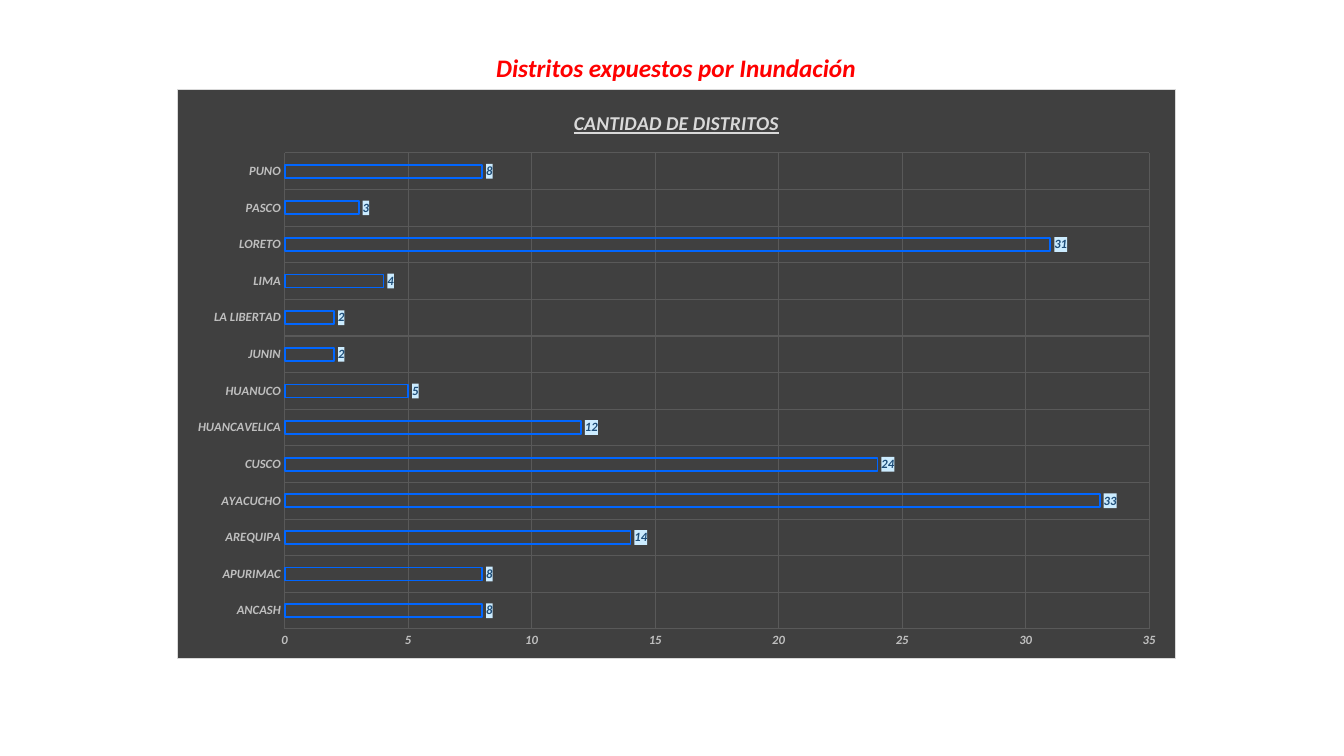
from lxml import etree
from pptx import Presentation
from pptx.chart.data import CategoryChartData
from pptx.dml.color import RGBColor
from pptx.enum.chart import XL_CHART_TYPE as ChartType, XL_LABEL_POSITION as LabelPosition
from pptx.enum.chart import XL_TICK_MARK as TickMark
from pptx.enum.text import MSO_ANCHOR as Anchor, PP_ALIGN as Align
from pptx.oxml import parse_xml
from pptx.oxml.ns import nsdecls, qn
from pptx.util import Inches, Pt

RED = RGBColor(0xFF, 0x00, 0x00)
BLUE = RGBColor(0x00, 0x66, 0xFF)
NAVY = RGBColor(0x1F, 0x4E, 0x79)
PALE_BLUE = RGBColor(0xCC, 0xEC, 0xFF)
CHARCOAL = RGBColor(0x40, 0x40, 0x40)
GRID_GRAY = RGBColor(0x59, 0x59, 0x59)
AXIS_GRAY = RGBColor(0xBF, 0xBF, 0xBF)
LIGHT_GRAY = RGBColor(0xD9, 0xD9, 0xD9)

DISTRICTS = {
    "ANCASH": 8, "APURIMAC": 8, "AREQUIPA": 14, "AYACUCHO": 33, "CUSCO": 24,
    "HUANCAVELICA": 12, "HUANUCO": 5, "JUNIN": 2, "LA LIBERTAD": 2, "LIMA": 4,
    "LORETO": 31, "PASCO": 3, "PUNO": 8,
}


def style_font(font, size, color, underline=None):
    font.name = "Calibri"
    font.size = Pt(size)
    font.bold = True
    font.italic = True
    font.underline = underline
    font.color.rgb = color


def box_format(fill, border=""):
    return parse_xml(
        f'<c:spPr {nsdecls("c", "a")}><a:solidFill><a:srgbClr val="{fill}"/></a:solidFill>'
        f'{border}</c:spPr>'
    )


presentation = Presentation()
presentation.slide_width = Inches(13.33)
presentation.slide_height = Inches(7.5)
slide = presentation.slides.add_slide(presentation.slide_layouts[6])

heading = slide.shapes.add_textbox(Inches(4.8), Inches(0.47), Inches(3.81), Inches(0.4))
heading.text_frame.word_wrap = False
heading.text_frame.vertical_anchor = Anchor.TOP
paragraph = heading.text_frame.paragraphs[0]
paragraph.alignment = Align.CENTER
run = paragraph.add_run()
run.text = "Distritos expuestos por Inundación"
style_font(run.font, 18, RED)

chart_data = CategoryChartData(number_format="#,##0")
chart_data.categories = list(DISTRICTS)
chart_data.add_series("Series 1", list(DISTRICTS.values()))
chart = slide.shapes.add_chart(
    ChartType.BAR_CLUSTERED, Inches(1.76), Inches(0.88), Inches(9.9), Inches(5.66), chart_data
).chart
chart.has_legend = False
chart.font.name = "Calibri"
chart.font.size = Pt(10)

chart.has_title = True
chart.chart_title.include_in_layout = False
title_paragraph = chart.chart_title.text_frame.paragraphs[0]
title_run = title_paragraph.add_run()
title_run.text = "CANTIDAD DE DISTRITOS"
style_font(title_run.font, 14, LIGHT_GRAY, underline=True)

for axis in (chart.category_axis, chart.value_axis):
    axis.major_tick_mark = TickMark.NONE
    axis.minor_tick_mark = TickMark.NONE
    axis.format.line.fill.background()
    axis.has_major_gridlines = True
    axis.major_gridlines.format.line.color.rgb = GRID_GRAY
    axis.major_gridlines.format.line.width = Pt(0.75)
    style_font(axis.tick_labels.font, 9, AXIS_GRAY)
chart.value_axis.minimum_scale = 0
chart.value_axis.maximum_scale = 35
chart.value_axis.major_unit = 5
chart.value_axis.tick_labels.number_format = "#,##0"
chart.value_axis.tick_labels.number_format_is_linked = False

plot = chart.plots[0]
plot.gap_width = 182
plot.overlap = -50
plot.vary_by_categories = False
series = plot.series[0]
series.format.fill.background()
series.format.line.color.rgb = BLUE
series.format.line.width = Pt(1.25)

labels = series.data_labels
labels.show_value = True
labels.position = LabelPosition.OUTSIDE_END
labels.number_format = "#,##0"
labels.number_format_is_linked = False
style_font(labels.font, 9, NAVY)
labels.font._element.getparent().getparent().getparent().addprevious(box_format(PALE_BLUE))

chart_space = chart.element
border = (
    f'<a:ln w="{Pt(0.75)}"><a:solidFill><a:srgbClr val="{LIGHT_GRAY}"/></a:solidFill></a:ln>'
)
chart_space.find(qn("c:chart")).addnext(box_format(CHARCOAL, border))

plot_area = chart_space.find(qn("c:chart")).find(qn("c:plotArea"))
for old_layout in plot_area.findall(qn("c:layout")):
    plot_area.remove(old_layout)
layout = parse_xml(f'<c:layout {nsdecls("c")}><c:manualLayout/></c:layout>')
for tag, value in (
    ("layoutTarget", "inner"), ("xMode", "edge"), ("yMode", "edge"),
    ("x", "0.107"), ("y", "0.112"), ("w", "0.867"), ("h", "0.836"),
):
    etree.SubElement(layout[0], qn(f"c:{tag}")).set("val", value)
plot_area.insert(0, layout)

presentation.save("out.pptx")
